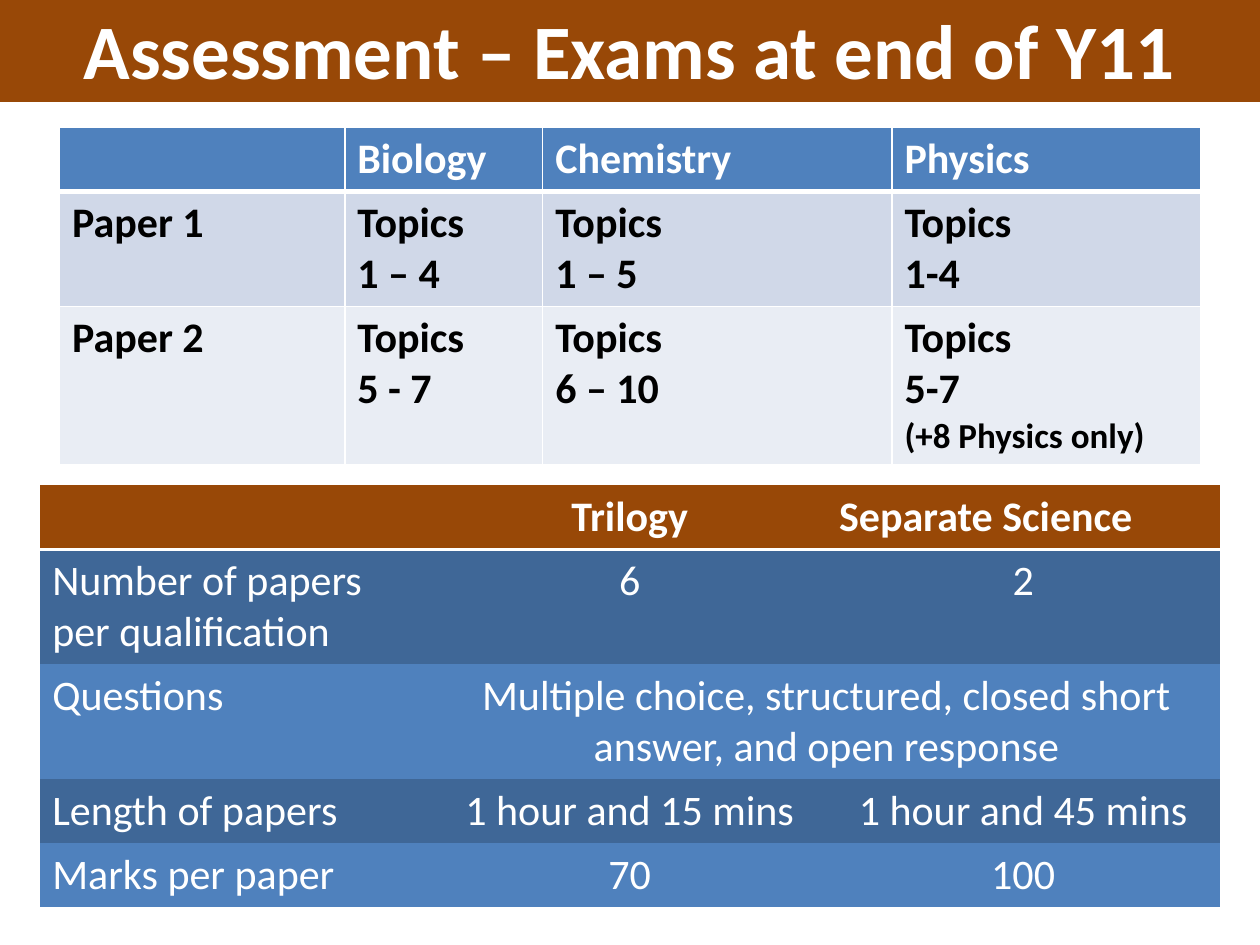
from pptx import Presentation
from pptx.dml.color import RGBColor
from pptx.enum.text import MSO_ANCHOR, MSO_AUTO_SIZE, PP_ALIGN
from pptx.oxml import parse_xml
from pptx.oxml.ns import nsdecls
from pptx.util import Cm, Pt

WHITE, BLACK = "FFFFFF", "000000"
BROWN, BLUE, DARK_BLUE = "984807", "4F81BD", "3F6797"
PALE_BLUE, PALEST_BLUE = "D0D8E8", "E9EDF4"

EXAM_TOPICS = [
    ["", "Biology", "Chemistry", "Physics"],
    ["Paper 1", "Topics\n1 – 4", "Topics\n1 – 5", "Topics\n1-4"],
    ["Paper 2", "Topics\n5 - 7", "Topics\n6 – 10", "Topics\n5-7\n(+8 Physics only)"],
]
PAPER_FORMAT = [
    ["", "Trilogy", "Separate Science"],
    ["Number of papers per qualification", "6", "2"],
    ["Questions", "Multiple choice, structured, closed short answer, and open response", ""],
    ["Length of papers", "1 hour and 15 mins", "1 hour and 45 mins"],
    ["Marks per paper", "70", "100"],
]


def rgb(colour):
    return RGBColor.from_string(colour)


def format_font(font, colour, **values):
    font.color.rgb = rgb(colour)
    for name, value in {"name": "Calibri", "size": Pt(24), **values}.items():
        setattr(font, name, value)


def set_borders(cell, widths):
    """Draw white borders; widths are points for left, right, top, bottom, 0 for none."""
    properties = cell._tc.get_or_add_tcPr()
    for index, (side, width) in enumerate(zip("LRTB", widths)):
        fill = f'<a:solidFill><a:srgbClr val="{WHITE}"/></a:solidFill>' if width else "<a:noFill/>"
        line = parse_xml(f'<a:ln{side} {nsdecls("a")} w="{Pt(width)}">{fill}</a:ln{side}>')
        properties.insert(index, line)


def add_title(slide, text):
    title = slide.shapes.title
    title.left, title.top, title.width, title.height = Cm(0), Cm(-0.08), Cm(25.4), Cm(2.13)
    title.fill.solid()
    title.fill.fore_color.rgb = rgb(BROWN)
    title.line.color.rgb = rgb(BROWN)
    title.line.width = Pt(0.75)
    frame = title.text_frame
    frame.text = text
    frame.word_wrap = True
    frame.auto_size = MSO_AUTO_SIZE.NONE
    frame.vertical_anchor = MSO_ANCHOR.MIDDLE
    frame.paragraphs[0].alignment = PP_ALIGN.CENTER
    format_font(frame.paragraphs[0].font, WHITE, size=Pt(44), bold=True)


def add_table(slide, content, left, top, widths, heights, fills, body_colour, body_bold,
              line_width, header_line):
    table = slide.shapes.add_table(
        len(heights), len(widths), Cm(left), Cm(top), Cm(sum(widths)), Cm(sum(heights))
    ).table
    for column, width in zip(table.columns, widths):
        column.width = Cm(width)
    for row_index, (row, height, texts) in enumerate(zip(table.rows, heights, content)):
        row.height = Cm(height)
        is_header = row_index == 0
        top_line = header_line if row_index == 1 else line_width
        bottom_line = header_line if is_header else line_width
        for cell, text in zip(row.cells, texts):
            cell.fill.solid()
            cell.fill.fore_color.rgb = rgb(fills[row_index])
            set_borders(cell, (line_width, line_width, top_line, bottom_line))
            cell.text = text
            for paragraph in cell.text_frame.paragraphs:
                format_font(paragraph.font, WHITE if is_header else body_colour,
                            bold=is_header or body_bold)
    return table


def add_topics_table(slide):
    table = add_table(slide, EXAM_TOPICS, 1.2, 2.57, [5.75, 3.99, 7.04, 6.22],
                      [1.27, 2.29, 3.12], [BLUE, PALE_BLUE, PALEST_BLUE], BLACK, True, 1, 3)
    table.cell(2, 3).text_frame.paragraphs[2].font.size = Pt(20)


def add_format_table(slide):
    table = add_table(slide, PAPER_FORMAT, 0.8, 9.78, [7.93] * 3,
                      [1.27, 2.29, 2.29, 1.27, 1.27],
                      [BROWN] + [DARK_BLUE, BLUE] * 2, WHITE, False, 0, 2)
    for row_index in range(len(PAPER_FORMAT)):
        for column_index in (1, 2):
            if (row_index, column_index) != (0, 2):
                paragraph = table.cell(row_index, column_index).text_frame.paragraphs[0]
                paragraph.alignment = PP_ALIGN.CENTER
    table.cell(2, 1).merge(table.cell(2, 2))


def main():
    presentation = Presentation()
    presentation.slide_width, presentation.slide_height = Cm(25.4), Cm(19.05)
    slide = presentation.slides.add_slide(presentation.slide_layouts[5])
    add_topics_table(slide)
    add_format_table(slide)
    add_title(slide, "Assessment – Exams at end of Y11")
    presentation.save("out.pptx")


if __name__ == "__main__":
    main()
